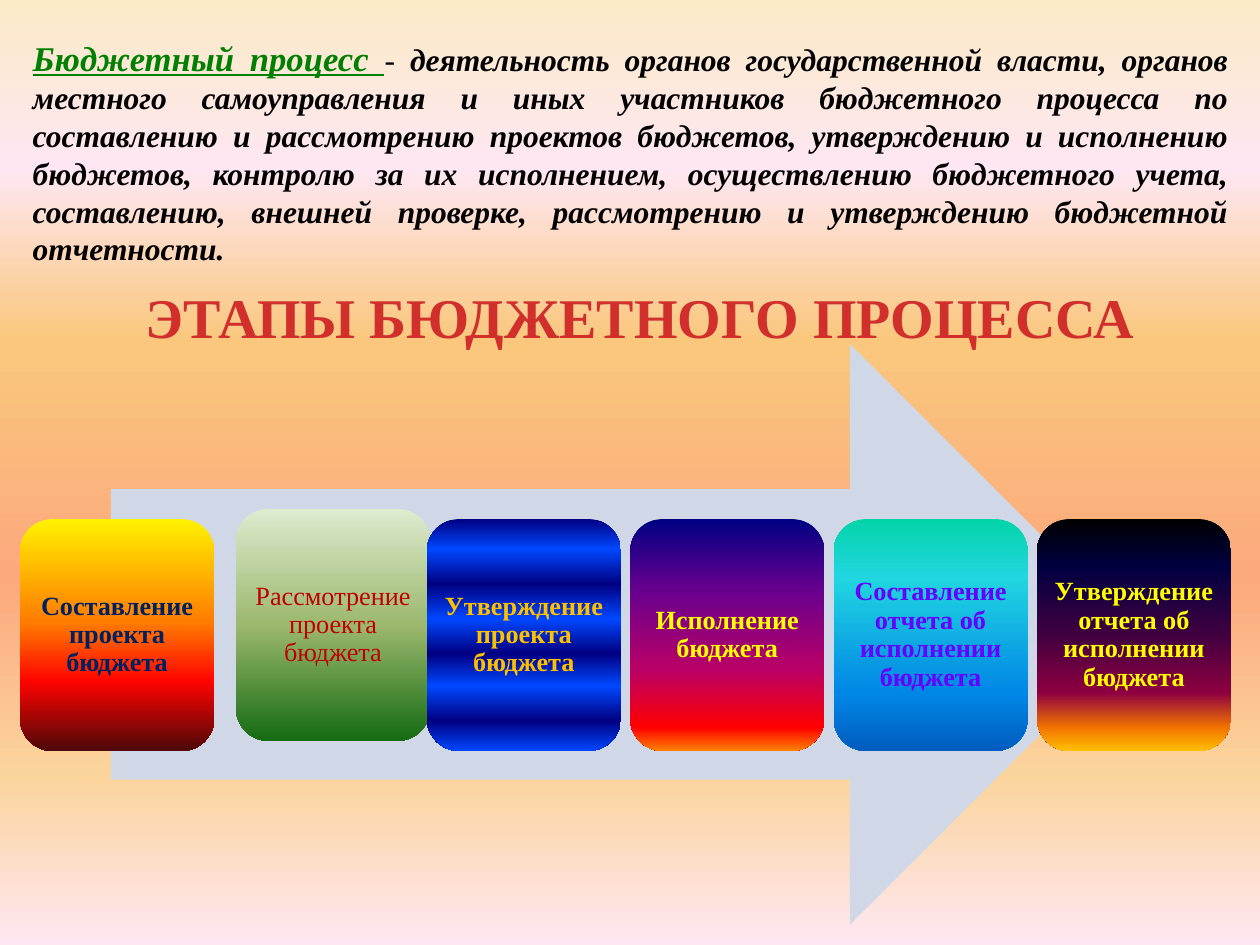
from dataclasses import dataclass

from lxml import etree
from pptx import Presentation
from pptx.enum import shapes, text
from pptx.oxml import ns
from pptx.util import Inches, Pt
from pptx.dml.color import RGBColor
from pptx.dml.fill import FillFormat
from pptx.slide import Slide

FONT = "Times New Roman"
COLORS = {
    "term": "008000",
    "definition": "000000",
    "heading": "D02F2C",
    "arrow": "D0D8E8",
}
BACKGROUND = [(0, "FBEAC7"), (18, "FEE7F2"), (36, "FAC77D"),
              (61, "FBA97D"), (82, "FBD49C"), (100, "FEE7F2")]


@dataclass
class Stage:
    label: str
    color: str
    stops: list[tuple[int, str]]
    bold: bool = True
    shift: tuple[float, float] = (0, 0)


STAGES = [
    Stage("Составление проекта бюджета", "002060",
          [(0, "FFF200"), (45, "FF7A00"), (70, "FF0300"), (100, "4D0808")]),
    Stage("Рассмотрение проекта бюджета", "C00000",
          [(0, "DDEBCF"), (50, "9CB86E"), (100, "156B13")],
          bold=False, shift=(0.1, -0.08)),
    Stage("Утверждение проекта бюджета", "FFC000",
          [(place, ("000082", "0047FF")[index % 2])
           for index, place in enumerate((0, 13, 28, 43, 58, 72, 87, 100))]),
    Stage("Исполнение бюджета", "FFFF00",
          [(0, "000082"), (30, "66008F"), (65, "BA0066"), (90, "FF0000"), (100, "FF8200")]),
    Stage("Составление отчета об исполнении бюджета", "6600FF",
          [(0, "03D4A8"), (25, "21D6E0"), (75, "0087E6"), (100, "005CBF")]),
    Stage("Утверждение отчета об исполнении бюджета", "FFFF00",
          [(0, "000000"), (20, "000040"), (50, "400040"),
           (75, "8F0040"), (90, "F27300"), (100, "FFBF00")]),
]
STAGE_LEFT, STAGE_TOP, STAGE_STEP = 0.16, 4.12, 1.614
STAGE_WIDTH, STAGE_HEIGHT = 1.54, 1.84


def fill_gradient(fill: FillFormat, holder, stops: list[tuple[int, str]]) -> None:
    """Fill from top to bottom with the given (percent, colour) stops."""
    fill.gradient()
    fill.gradient_angle = 270
    stop_list = next(holder.iter(ns.qn("a:gsLst")))
    for old_stop in list(stop_list):
        stop_list.remove(old_stop)
    for percent, color in stops:
        stop = etree.SubElement(stop_list, ns.qn("a:gs"), pos=str(percent * 1000))
        etree.SubElement(stop, ns.qn("a:srgbClr"), val=color)


def format_span(span, size: float, color: str, bold: bool = True,
                italic: bool = False, underline: bool = False) -> None:
    span.font.name = FONT
    span.font.size = Pt(size)
    span.font.color.rgb = RGBColor.from_string(color)
    span.font.bold = bold
    span.font.italic = italic
    span.font.underline = underline


def add_definition(page: Slide) -> None:
    title = page.shapes.title
    title.left, title.top = Inches(0.16), Inches(0.16)
    title.width, title.height = Inches(9.69), Inches(2.34)
    frame = title.text_frame
    frame.vertical_anchor = text.MSO_ANCHOR.TOP
    frame.margin_top = Inches(0.13)
    para = frame.paragraphs[0]
    para.alignment = text.PP_ALIGN.JUSTIFY
    spans = [
        ("Бюджетный процесс ", 19.8, COLORS["term"], True, True),
        ("- ", 18, COLORS["definition"], False, False),
        ("деятельность органов государственной власти, органов местного "
         "самоуправления и иных участников бюджетного процесса по составлению "
         "и рассмотрению проектов бюджетов, утверждению и исполнению бюджетов, "
         "контролю за их исполнением, осуществлению бюджетного учета, "
         "составлению, внешней проверке, рассмотрению и утверждению бюджетной "
         "отчетности.", 18, COLORS["definition"], True, False),
    ]
    for words, size, color, bold, underline in spans:
        span = para.add_run()
        span.text = words
        format_span(span, size, color, bold, italic=True, underline=underline)


def add_arrow(page: Slide) -> None:
    arrow = page.shapes.add_shape(shapes.MSO_SHAPE.RIGHT_ARROW, Inches(0.88),
                                  Inches(2.73), Inches(8.17), Inches(4.61))
    arrow.shadow.inherit = False
    arrow.fill.solid()
    arrow.fill.fore_color.rgb = RGBColor.from_string(COLORS["arrow"])
    arrow.line.fill.background()


def add_stage(page: Slide, index: int, stage: Stage) -> None:
    left = STAGE_LEFT + index * STAGE_STEP + stage.shift[0]
    top = STAGE_TOP + stage.shift[1]
    box = page.shapes.add_shape(shapes.MSO_SHAPE.ROUNDED_RECTANGLE, Inches(left),
                                Inches(top), Inches(STAGE_WIDTH), Inches(STAGE_HEIGHT))
    box.shadow.inherit = False
    box.line.fill.background()
    fill_gradient(box.fill, box.element.spPr, stage.stops)
    frame = box.text_frame
    frame.word_wrap = True
    frame.vertical_anchor = text.MSO_ANCHOR.MIDDLE
    frame.margin_left = frame.margin_right = frame.margin_top = frame.margin_bottom = 0
    frame.text = stage.label
    para = frame.paragraphs[0]
    para.alignment = text.PP_ALIGN.CENTER
    para.line_spacing = 0.9
    format_span(para.runs[0], 15, stage.color, stage.bold)


def add_heading(page: Slide) -> None:
    box = page.shapes.add_textbox(Inches(0.47), Inches(2.19), Inches(9.22), Inches(0.64))
    frame = box.text_frame
    frame.word_wrap = True
    frame.text = "ЭТАПЫ БЮДЖЕТНОГО ПРОЦЕССА"
    para = frame.paragraphs[0]
    para.alignment = text.PP_ALIGN.CENTER
    format_span(para.runs[0], 32, COLORS["heading"])


def main() -> None:
    deck = Presentation()
    deck.slide_width, deck.slide_height = Inches(10), Inches(7.5)
    page = deck.slides.add_slide(deck.slide_layouts[5])
    fill_gradient(page.background.fill, page.element, BACKGROUND)

    # Definition at the top
    add_definition(page)

    # Arrow with the stages of the process
    add_arrow(page)
    for index, stage in enumerate(STAGES):
        add_stage(page, index, stage)

    # Heading above the arrow
    add_heading(page)
    deck.save("out.pptx")


if __name__ == "__main__":
    main()
